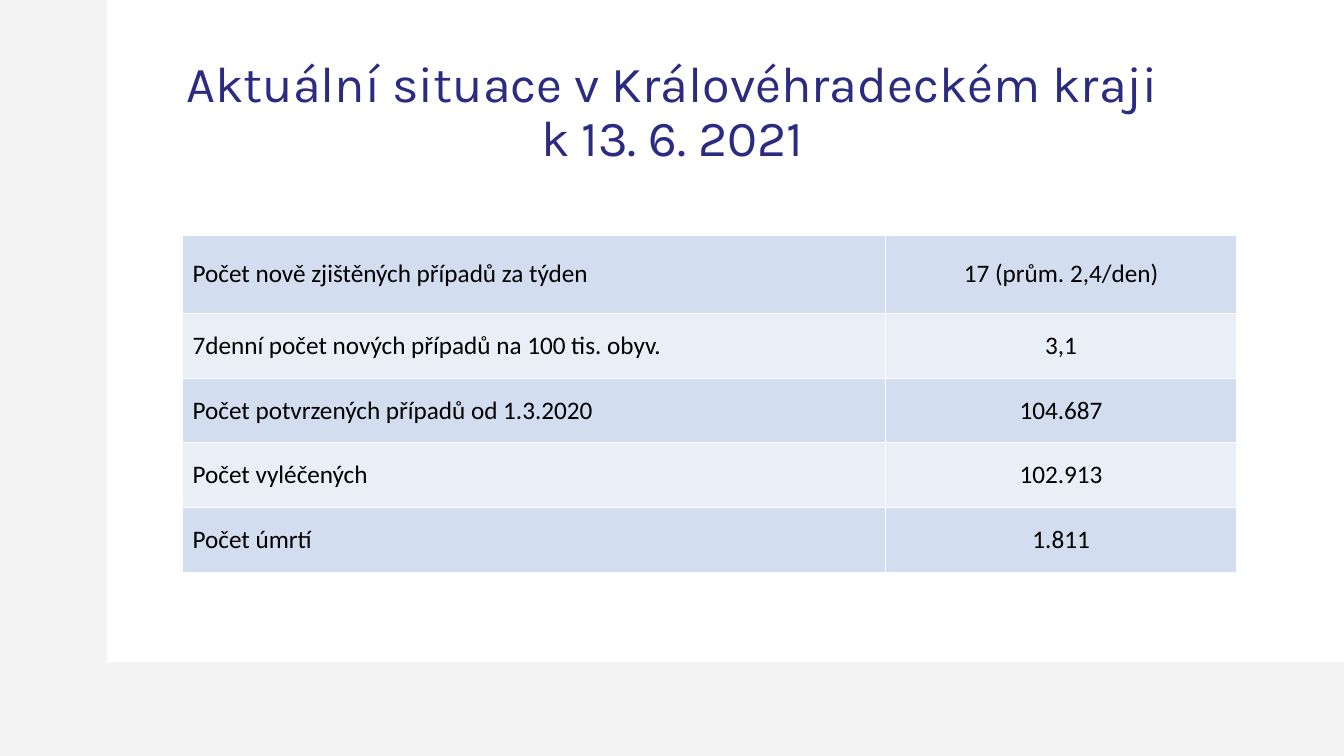
from lxml import etree
from pptx import Presentation
from pptx.dml.color import RGBColor
from pptx.enum.shapes import MSO_SHAPE
from pptx.enum.text import MSO_ANCHOR, PP_ALIGN
from pptx.oxml import parse_xml
from pptx.oxml.ns import nsdecls
from pptx.util import Cm, Pt

RECT = MSO_SHAPE.RECTANGLE
MIDDLE = MSO_ANCHOR.MIDDLE
LEFT, CENTER = PP_ALIGN.LEFT, PP_ALIGN.CENTER

GRAY = RGBColor(0xF4, 0xF4, 0xF4)
WHITE = RGBColor(0xFF, 0xFF, 0xFF)
BLACK = RGBColor(0, 0, 0)
NAVY = RGBColor(0x2B, 0x2B, 0x82)
BANDS = RGBColor(0xD2, 0xDE, 0xEF), RGBColor(0xEA, 0xEF, 0xF7)

TITLE = "Aktuální situace v Královéhradeckém kraji\vk 13. 6. 2021"
ROWS = [
    ("Počet nově zjištěných případů za týden", "17 (prům. 2,4/den)"),
    ("7denní počet nových případů na 100 tis. obyv.", "3,1"),
    ("Počet potvrzených případů od 1.3.2020", "104.687"),
    ("Počet vyléčených", "102.913"),
    ("Počet úmrtí", "1.811"),
]


def write(frame, text, font="Calibri", size=18, color=BLACK, align=LEFT, space=1.0):
    para = frame.paragraphs[0]
    para.text = text
    para.alignment = align
    para.line_spacing = space
    for run in para.runs:
        run.font.name = font
        run.font.size = Pt(size)
        run.font.color.rgb = color


def add_panel(slide, left, top, width, height):
    back = slide.background.fill
    back.solid()
    back.fore_color.rgb = GRAY
    panel = slide.shapes.add_shape(RECT, left, top, width, height)
    panel.shadow.inherit = False
    panel.fill.solid()
    panel.fill.fore_color.rgb = WHITE
    panel.line.fill.background()


def add_title(slide, left, top, width, height):
    frame = slide.shapes.add_textbox(left, top, width, height).text_frame
    frame.word_wrap = True
    frame.vertical_anchor = MIDDLE
    write(frame, TITLE, font="Karla", size=36, color=NAVY, align=CENTER, space=0.9)


def add_edges(cell):
    props = cell._tc.get_or_add_tcPr()
    for spot, side in enumerate("LRTB"):
        edge = parse_xml(f'<a:ln{side} {nsdecls("a")} w="{Pt(1)}"/>')
        fill = etree.SubElement(edge, edge.tag.replace(f"ln{side}", "solidFill"))
        etree.SubElement(fill, fill.tag.replace("solidFill", "srgbClr"), val=str(WHITE))
        props.insert(spot, edge)


def add_stats(slide, left, top, width, height):
    table = slide.shapes.add_table(len(ROWS), 2, left, top, width, height).table
    table.first_row = False
    table.horz_banding = False
    table.columns[0].width = int(width * 2 / 3)
    table.columns[1].width = width - table.columns[0].width
    first = Cm(1.98)
    for i, texts in enumerate(ROWS):
        table.rows[i].height = first if i == 0 else (height - first) // (len(ROWS) - 1)
        for j, text in enumerate(texts):
            cell = table.cell(i, j)
            cell.fill.solid()
            cell.fill.fore_color.rgb = BANDS[i % 2]
            cell.vertical_anchor = MIDDLE
            add_edges(cell)
            write(cell.text_frame, text, align=CENTER if j else LEFT)


def main():
    deck = Presentation()
    deck.slide_width, deck.slide_height = Cm(33.87), Cm(19.05)
    slide = deck.slides.add_slide(deck.slide_layouts[6])
    add_panel(slide, Cm(2.7), 0, Cm(31.17), Cm(16.69))
    add_title(slide, Cm(2.34), Cm(1.02), Cm(29.21), Cm(3.68))
    add_stats(slide, Cm(4.6), Cm(5.92), Cm(26.57), Cm(8.5))
    deck.save("out.pptx")


if __name__ == "__main__":
    main()
